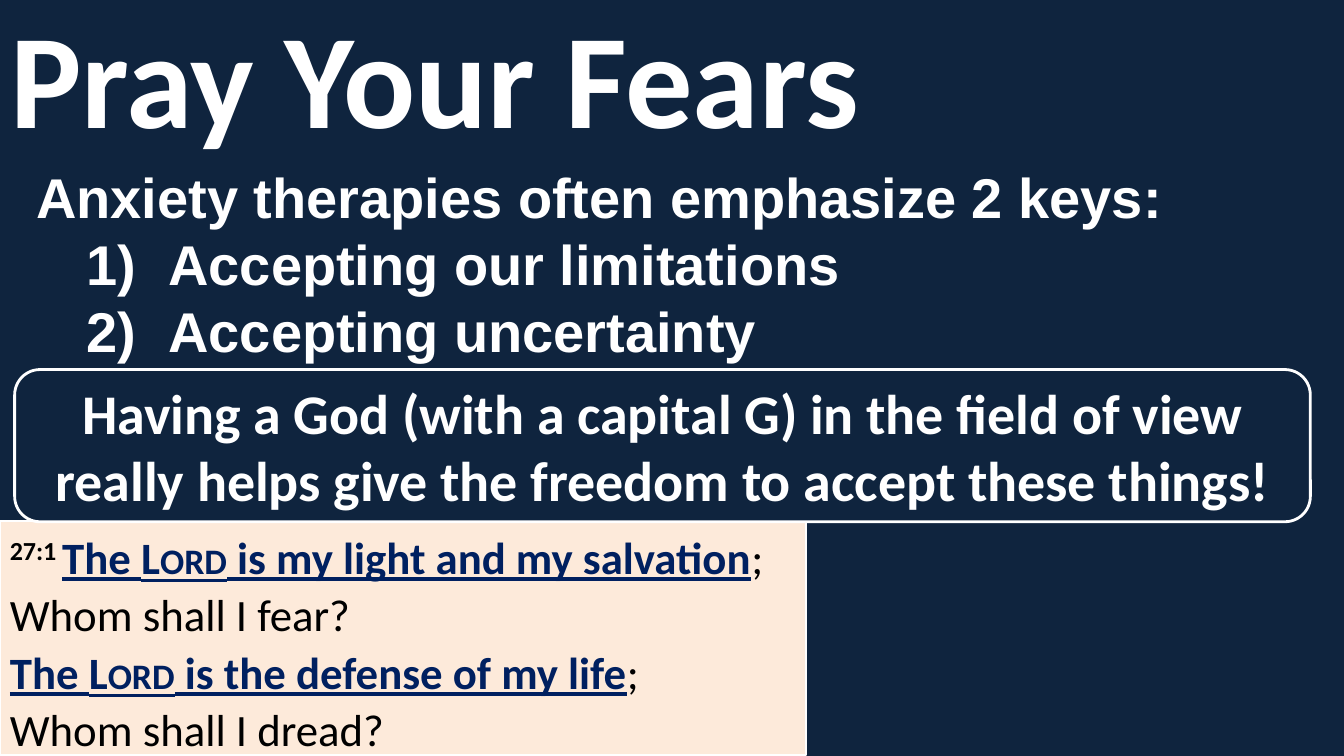
from lxml.etree import SubElement
from pptx import Presentation
from pptx.dml.color import RGBColor
from pptx.enum.shapes import MSO_SHAPE as Shape
from pptx.enum.text import MSO_ANCHOR as Anchor, MSO_AUTO_SIZE as AutoSize, PP_ALIGN as Align
from pptx.oxml.ns import qn
from pptx.util import Pt

EMU_PER_PX = 9525
COLORS = {
    "navy": "0F243E",
    "white": "FFFFFF",
    "peach": "FDEADA",
    "black": "000000",
    "emphasis": "002060",
}
KEYS = ["Accepting our limitations", "Accepting uncertainty"]
# Each verse line is a list of (text, style) pieces
VERSE = [
    [("27:1 ", "number"), ("The ", "key"), ("Lord", "lord"),
     (" is my light and my salvation", "key"), (";", "plain")],
    [("Whom shall I fear?", "plain")],
    [("The ", "key"), ("Lord", "lord"), (" is the defense of my life", "key"), (";", "plain")],
    [("Whom shall I dread?", "plain")],
]


def px(length):
    return round(length * EMU_PER_PX)


def color(name):
    return RGBColor.from_string(COLORS[name])


def set_font(font, name, size, color_name="white", bold=True):
    font.name, font.size, font.bold = name, Pt(size), bold
    font.color.rgb = color(color_name)


def add_panel(slide, kind, box, fill, line_width):
    panel = slide.shapes.add_shape(kind, *map(px, box))
    panel.shadow.inherit = False
    panel.fill.solid()
    panel.fill.fore_color.rgb = color(fill)
    panel.line.color.rgb = color("white")
    panel.line.width = Pt(line_width)
    panel.text_frame.word_wrap = True
    return panel


def add_verse(slide, box):
    frame = add_panel(slide, Shape.RECTANGLE, box, "peach", 1.5).text_frame
    frame.vertical_anchor = Anchor.TOP
    paragraph = frame.paragraphs[0]
    paragraph.alignment = Align.LEFT
    paragraph.line_spacing = 1.07
    set_font(paragraph.font, "Calibri", 32, "black", bold=False)
    for index, pieces in enumerate(VERSE):
        if index:
            paragraph.add_line_break()
        for text, style in pieces:
            run = paragraph.add_run()
            run.text = text
            emphasized = style in ("key", "lord")
            set_font(run.font, "Calibri", 32, "emphasis" if emphasized else "black",
                     bold=style != "plain")
            run.font.underline = emphasized
            if style == "number":
                run.font._element.set("baseline", "30000")
            if style == "lord":
                run.font._element.set("cap", "small")


def add_title(slide, box):
    title = slide.shapes.title
    title.left, title.top, title.width, title.height = map(px, box)
    frame = title.text_frame
    frame.text = "Pray Your Fears"
    frame.word_wrap = True
    frame.auto_size = AutoSize.NONE
    frame.vertical_anchor = Anchor.MIDDLE
    paragraph = frame.paragraphs[0]
    paragraph.alignment = Align.LEFT
    set_font(paragraph.font, "Calibri", 96)


def add_keys(slide, box):
    frame = slide.shapes.add_textbox(*map(px, box)).text_frame
    frame.word_wrap = True
    frame.auto_size = AutoSize.SHAPE_TO_FIT_TEXT
    frame.text = "\n".join(["Anxiety therapies often emphasize 2 keys:", *KEYS])
    for index, paragraph in enumerate(frame.paragraphs):
        set_font(paragraph.font, "Arial", 40)
        if index:
            paragraph.level = 1
            # Hanging automatic number, placed before the default run properties
            properties = paragraph._p.get_or_add_pPr()
            properties.set("marL", str(px(126)))
            properties.set("indent", str(px(-78)))
            number = SubElement(properties, qn("a:buAutoNum"), type="arabicParenR")
            properties.find(qn("a:defRPr")).addprevious(number)


def add_callout(slide, box):
    frame = add_panel(slide, Shape.ROUNDED_RECTANGLE, box, "navy", 2).text_frame
    frame.vertical_anchor = Anchor.MIDDLE
    frame.text = ("Having a God (with a capital G) in the field of view "
                  "really helps give the freedom to accept these things!")
    paragraph = frame.paragraphs[0]
    paragraph.alignment = Align.CENTER
    set_font(paragraph.font, "Calibri", 40)


def main():
    presentation = Presentation()
    presentation.slide_width, presentation.slide_height = px(1280), px(720)
    slide = presentation.slides.add_slide(presentation.slide_layouts[5])
    slide.background.fill.solid()
    slide.background.fill.fore_color.rgb = color("navy")

    # Regions, as left, top, width, height
    add_verse(slide, (0, 496, 768, 223))
    add_title(slide, (0, -1, 1280, 145))
    add_keys(slide, (25, 150, 1242, 204))
    add_callout(slide, (14, 352, 1234, 145))
    presentation.save("out.pptx")


if __name__ == "__main__":
    main()
